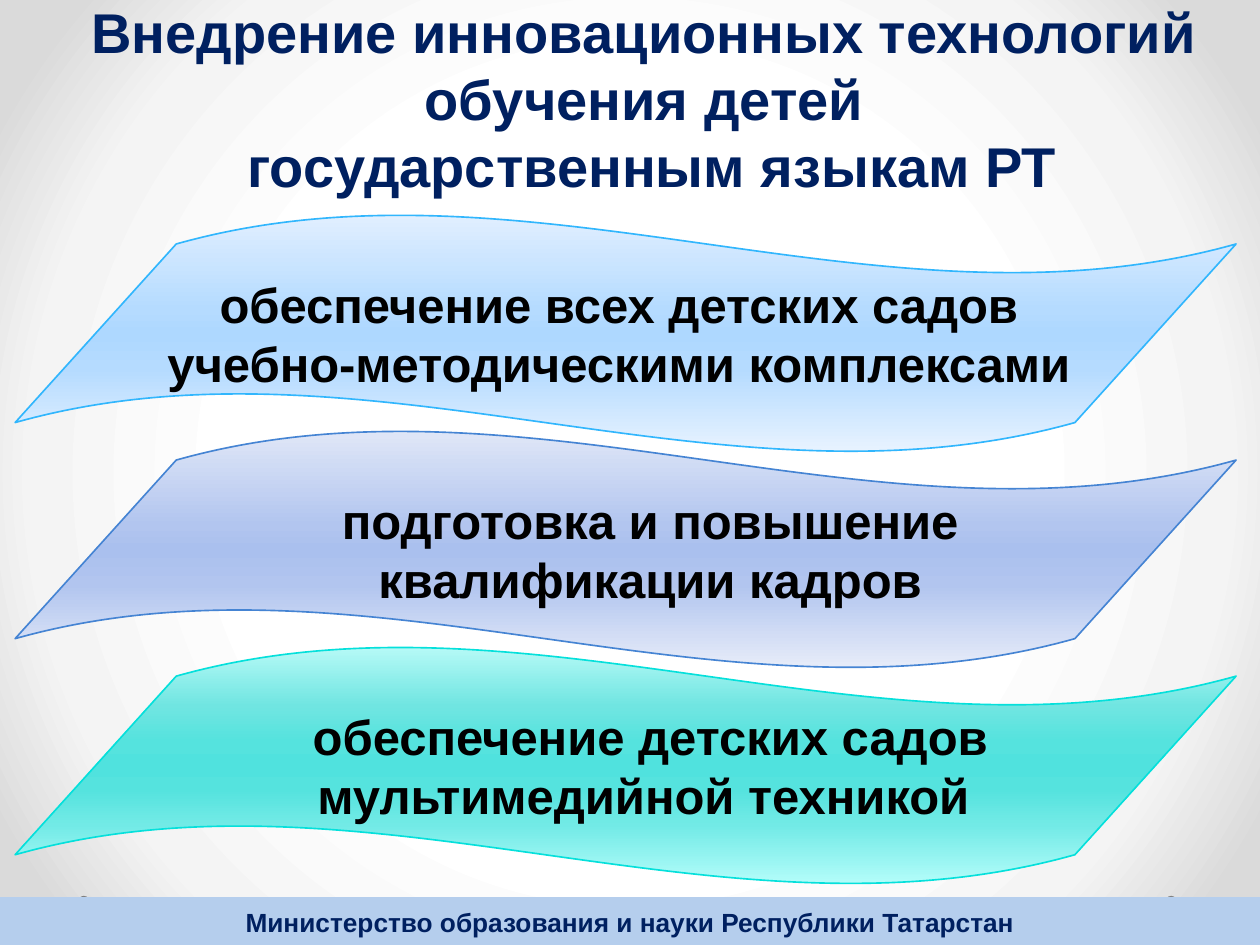
"""Build a slide with a title, three wave banners and a footer bar."""
from lxml import etree
from pptx import Presentation
from pptx.dml.color import RGBColor
from pptx.enum.shapes import MSO_SHAPE as Shape
from pptx.enum.text import MSO_ANCHOR as Anchor, MSO_AUTO_SIZE as AutoSize, PP_ALIGN as Align
from pptx.oxml.ns import qn
from pptx.util import Inches, Pt

COLORS = {"navy": "002060", "black": "000000", "bar": "B5CEED", "dot": "808080"}
TITLE = "Внедрение инновационных технологий \vобучения детей \vгосударственным языкам РТ"
FOOTER = "Министерство образования и науки Республики Татарстан"
BACKGROUND = [(50, "FFFFFF"), (76, "F4F4F4"), (92, "DADADA")]
BANNERS = [
    {"lines": ["обеспечение всех детских садов ", "учебно-методическими комплексами "],
     "line": "31B6FD", "wrap": False, "margin": (0, 0), "indent": 0, "after": 0,
     "stops": [(0, "E1EFFF"), (40, "B5DBFF"), (50, "AED8FF"), (65, "B5DBFF"), (100, "E8F3FF")]},
    {"lines": ["подготовка и повышение квалификации кадров"],
     "line": "4584D3", "wrap": True, "margin": (0.1, 0.05), "indent": 0.39, "after": 24,
     "stops": [(0, "E0E7F7"), (40, "B2C5EF"), (50, "AAC0EE"), (65, "B2C5EF"), (100, "E7ECF9")]},
    {"lines": ["обеспечение детских садов мультимедийной техникой "],
     "line": "05E0DB", "wrap": True, "margin": (0.1, 0.05), "indent": 0.39, "after": 24,
     "stops": [(0, "B7FAF7"), (25, "70E5E1"), (40, "55E3DE"), (50, "50E2DE"),
               (60, "55E3DE"), (75, "72EAE6"), (100, "B4FDFA")]},
]
BANNER_TOP, BANNER_STEP = 1.7, 1.715


def set_gradient(fill, owner, stops, radial=False):
    fill.gradient()
    gradient = next(owner.iter(qn("a:gradFill")))
    for child in list(gradient):
        gradient.remove(child)
    stop_list = etree.SubElement(gradient, qn("a:gsLst"))
    for position, color in stops:
        stop = etree.SubElement(stop_list, qn("a:gs"), pos=str(position * 1000))
        etree.SubElement(stop, qn("a:srgbClr"), val=color)
    if radial:
        path = etree.SubElement(gradient, qn("a:path"), path="circle")
        etree.SubElement(path, qn("a:fillToRect"), dict.fromkeys("ltrb", "50000"))
    else:
        etree.SubElement(gradient, qn("a:lin"), ang="5400000", scaled="0")


def write_text(shape, lines, size, color, margin=(0.1, 0.05), wrap=True, indent=0, after=0):
    frame = shape.text_frame
    horizontal, vertical = map(Inches, margin)
    frame_format = {"word_wrap": wrap, "vertical_anchor": Anchor.MIDDLE,
                    "margin_left": horizontal, "margin_right": horizontal,
                    "margin_top": vertical, "margin_bottom": vertical}
    for name, value in frame_format.items():
        setattr(frame, name, value)
    font_format = {"name": "Arial", "size": Pt(size), "bold": True}
    for index, line in enumerate(lines):
        paragraph = frame.add_paragraph() if index else frame.paragraphs[0]
        paragraph.text = line
        paragraph.alignment = Align.CENTER
        paragraph.space_before, paragraph.space_after = Pt(0), Pt(after)
        properties = paragraph._p.get_or_add_pPr()
        properties.set("marL", str(Inches(indent)))
        properties.set("indent", "0")
        for run in paragraph.runs:
            for name, value in font_format.items():
                setattr(run.font, name, value)
            run.font.color.rgb = RGBColor.from_string(COLORS[color])


def add_shape(slide, kind, box, color=None):
    shape = slide.shapes.add_shape(kind, *map(Inches, box))
    shape.shadow.inherit = False
    if color:
        shape.fill.solid()
        shape.fill.fore_color.rgb = RGBColor.from_string(COLORS[color])
        shape.line.fill.background()
    return shape


def add_banner(slide, index, banner):
    top = BANNER_TOP + index * BANNER_STEP
    shape = add_shape(slide, Shape.WAVE, (0.12, top, 9.69, 1.89))
    shape.adjustments[0], shape.adjustments[1] = 0.125, -0.066
    set_gradient(shape.fill, shape._element, banner["stops"])
    shape.line.color.rgb = RGBColor.from_string(banner["line"])
    shape.line.width = Pt(0.94)
    write_text(shape, banner["lines"], 28, "black", banner["margin"],
               banner["wrap"], banner["indent"], banner["after"])


def main():
    presentation = Presentation()
    presentation.slide_width, presentation.slide_height = Inches(10), Inches(7.5)
    slide = presentation.slides.add_slide(presentation.slide_layouts[5])
    set_gradient(slide.background.fill, slide._element, BACKGROUND, radial=True)

    for left in (9.25, 0.62):
        add_shape(slide, Shape.OVAL, (left, 7.11, 0.09, 0.09), "dot")
    footer = add_shape(slide, Shape.RECTANGLE, (0, 7.12, 10, 0.39), "bar")
    write_text(footer, [FOOTER], 15, "navy")

    title = slide.shapes.title
    for name, value in zip(("left", "top", "width", "height"), (0.43, 0.09, 9.49, 1.38)):
        setattr(title, name, Inches(value))
    write_text(title, [TITLE], 32, "navy", (0.1, 0.08))
    title.text_frame.auto_size = AutoSize.SHAPE_TO_FIT_TEXT

    for index, banner in enumerate(BANNERS):
        add_banner(slide, index, banner)
    presentation.save("out.pptx")


if __name__ == "__main__":
    main()
